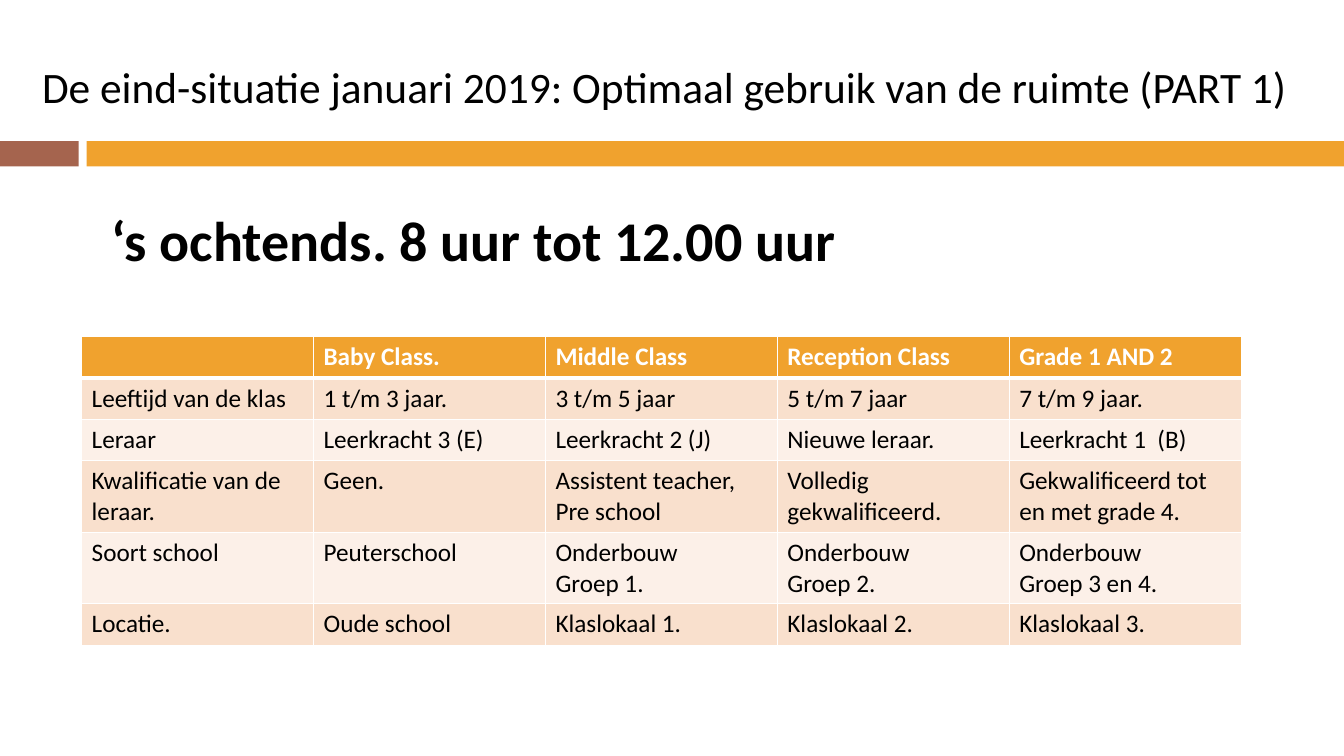
import pptx
import pptx.util
import pptx.dml.color
import pptx.enum.shapes
import pptx.enum.text
import pptx.oxml.ns
import lxml.etree
from pptx.util import Inches

FONT = "Calibri"
BLACK, WHITE = "000000", "FFFFFF"
ORANGE, BROWN = "F0A22E", "A5644E"
BANDS = ("F9E0CD", "FCF0E8")

ROWS = [
    ["", "Baby Class.", "Middle Class", "Reception Class", "Grade 1 AND 2"],
    ["Leeftijd van de klas", "1 t/m 3 jaar.", "3 t/m 5 jaar", "5 t/m 7 jaar", "7 t/m 9 jaar."],
    ["Leraar", "Leerkracht 3 (E)", "Leerkracht 2 (J)", "Nieuwe leraar.", "Leerkracht 1  (B)"],
    ["Kwalificatie van de leraar.", "Geen.", "Assistent teacher, Pre school",
     "Volledig gekwalificeerd.", "Gekwalificeerd tot en met grade 4."],
    ["Soort school", "Peuterschool", "Onderbouw\nGroep 1.", "Onderbouw\nGroep 2.",
     "Onderbouw\nGroep 3 en 4."],
    ["Locatie.", "Oude school", "Klaslokaal 1.", "Klaslokaal 2.", "Klaslokaal 3."],
]
ROW_HEIGHTS = [0.41, 0.41, 0.41, 0.7, 0.7, 0.41]


def color(value):
    return pptx.dml.color.RGBColor.from_string(value)


def write(tf, text, size, ink=BLACK, bold=False, align=None):
    tf.text = text
    tf.word_wrap = True
    for p in tf.paragraphs:
        p.font.name = FONT
        p.font.size = pptx.util.Pt(size)
        p.font.bold = bold
        p.font.color.rgb = color(ink)
        p.alignment = align


def add_title(s, x, y, w, h):
    sp = s.shapes.title
    sp.left, sp.top, sp.width, sp.height = [Inches(v) for v in (x, y, w, h)]
    tf = sp.text_frame
    tf.auto_size = pptx.enum.text.MSO_AUTO_SIZE.NONE
    tf.vertical_anchor = pptx.enum.text.MSO_ANCHOR.MIDDLE
    write(tf, "De eind-situatie januari 2019: Optimaal gebruik van de ruimte (PART 1)",
          31, align=pptx.enum.text.PP_ALIGN.CENTER)


def add_divider(s, x, y, w, h):
    block, gap = 0.78, 0.08
    start = block + gap
    for left, width, fill in ((x, block, BROWN), (x + start, w - start, ORANGE)):
        sp = s.shapes.add_shape(pptx.enum.shapes.MSO_SHAPE.RECTANGLE,
                                Inches(left), Inches(y), Inches(width), Inches(h))
        sp.shadow.inherit = False
        sp.fill.solid()
        sp.fill.fore_color.rgb = color(fill)
        sp.line.fill.background()


def add_subtitle(s, x, y, w, h):
    sp = s.shapes.add_textbox(Inches(x), Inches(y), Inches(w), Inches(h))
    write(sp.text_frame, "‘s ochtends. 8 uur tot 12.00 uur", 40, bold=True)


def set_borders(cell, top, bottom):
    """White cell borders; widths in points."""
    qn = pptx.oxml.ns.qn
    tcPr = cell._tc.get_or_add_tcPr()
    sides = (("a:lnL", 1), ("a:lnR", 1), ("a:lnT", top), ("a:lnB", bottom))
    for i, (tag, width) in enumerate(sides):
        ln = lxml.etree.Element(qn(tag), w=str(pptx.util.Pt(width)))
        fill = lxml.etree.SubElement(ln, qn("a:solidFill"))
        lxml.etree.SubElement(fill, qn("a:srgbClr"), val=WHITE)
        tcPr.insert(i, ln)


def add_schedule(s, x, y, w):
    cols = len(ROWS[0])
    table = s.shapes.add_table(len(ROWS), cols, Inches(x), Inches(y), Inches(w),
                               Inches(sum(ROW_HEIGHTS))).table
    for col in table.columns:
        col.width = Inches(w / cols)
    for r, texts in enumerate(ROWS):
        table.rows[r].height = Inches(ROW_HEIGHTS[r])
        header = r == 0
        for c, text in enumerate(texts):
            cell = table.cell(r, c)
            write(cell.text_frame, text, 18, WHITE if header else BLACK, header)
            cell.fill.solid()
            cell.fill.fore_color.rgb = color(ORANGE if header else BANDS[(r - 1) % 2])
            # Thick rule between header and body
            set_borders(cell, 3 if r == 1 else 1, 3 if header else 1)


def main():
    prs = pptx.Presentation()
    prs.slide_width, prs.slide_height = Inches(13.33), Inches(7.5)
    s = prs.slides.add_slide(prs.slide_layouts[5])
    add_divider(s, 0, 1.4, 13.33, 0.25)
    add_schedule(s, 0.81, 3.34, 11.5)
    add_subtitle(s, 1.01, 1.99, 9.46, 0.77)
    add_title(s, 0, 0.45, 13.17, 0.8)
    prs.save("out.pptx")


if __name__ == "__main__":
    main()
